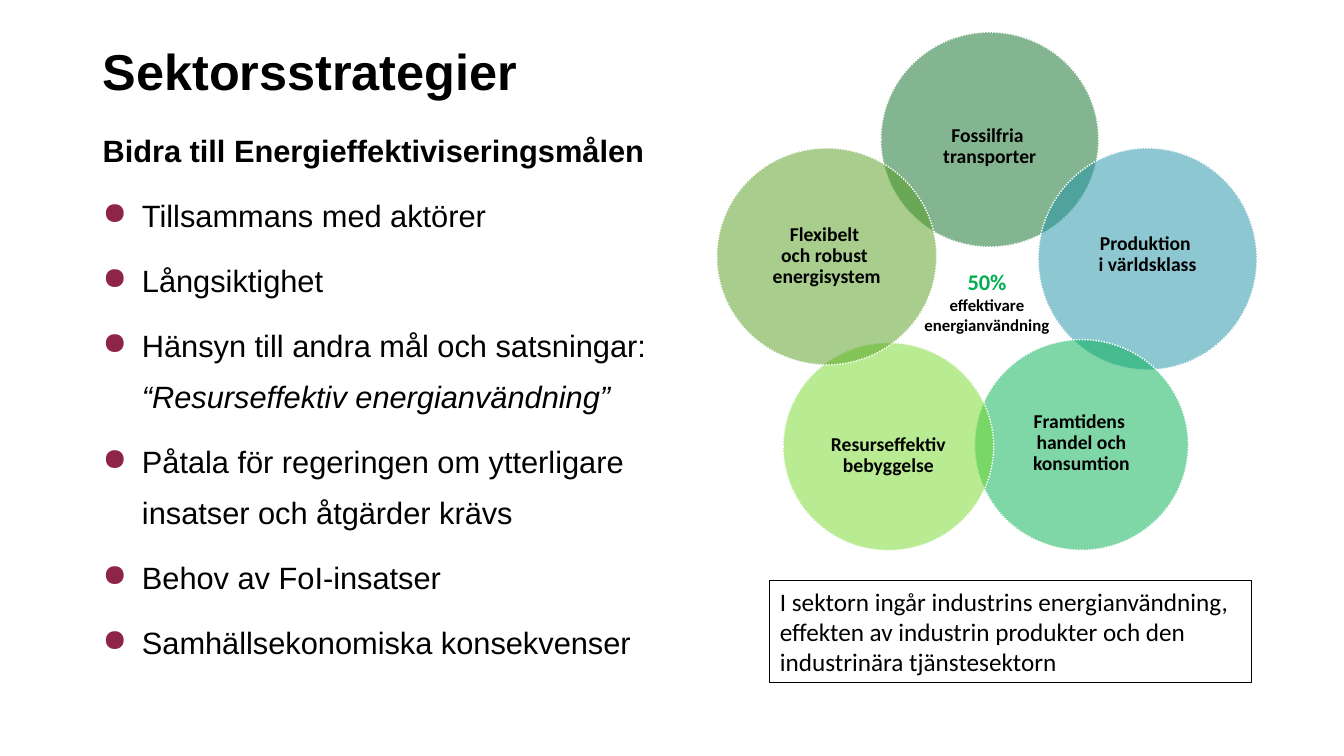
from lxml.etree import SubElement
from pptx import Presentation
from pptx.dml.color import RGBColor
from pptx.enum.dml import MSO_LINE
from pptx.enum.shapes import MSO_SHAPE
from pptx.enum.text import MSO_ANCHOR, PP_ALIGN
from pptx.oxml.ns import qn
from pptx.util import Inches, Pt

BLACK = RGBColor(0, 0, 0)
WHITE = RGBColor(0xFF, 0xFF, 0xFF)
WINE = RGBColor(0x8E, 0x25, 0x49)
FOREST = RGBColor(0x0A, 0x6C, 0x24)
TEAL = RGBColor(0x1D, 0x91, 0xA7)
GREEN = RGBColor(0x00, 0xB0, 0x50)
LIME = RGBColor(0x72, 0xD8, 0x26)
MOSS = RGBColor(0x52, 0x9D, 0x1C)

COLS, ROWS = 48, 27


class Deck:
    """Style and current slide; places are columns and rows of the grid."""
    head, body = "Arial", "Calibri"

    def __init__(self):
        self.show = Presentation()
        self.show.slide_width = Inches(13.33)
        self.show.slide_height = Inches(7.5)
        self.slide = self.show.slides.add_slide(self.show.slide_layouts[6])

    def place(self, col, row, wide, high):
        unit_x = self.show.slide_width / COLS
        unit_y = self.show.slide_height / ROWS
        return (round(col * unit_x), round(row * unit_y),
                round(wide * unit_x), round(high * unit_y))

    def style(self, para, face, size, bold=False, color=BLACK, align=PP_ALIGN.LEFT):
        para.alignment = align
        for run in para.runs:
            font = run.font
            font.name, font.size, font.bold = face, Pt(size), bold
            font.color.rgb = color

    def text(self, spot, words, anchor=MSO_ANCHOR.TOP):
        frame = self.slide.shapes.add_textbox(*self.place(*spot)).text_frame
        frame.word_wrap = True
        frame.vertical_anchor = anchor
        frame.text = words
        return frame

    def shape(self, kind, spot, words):
        shape = self.slide.shapes.add_shape(kind, *self.place(*spot))
        shape.shadow.inherit = False
        frame = shape.text_frame
        frame.word_wrap = True
        frame.vertical_anchor = MSO_ANCHOR.MIDDLE
        frame.paragraphs[0].text = words
        return shape

    def title(self, spot, words):
        para = self.text(spot, words, MSO_ANCHOR.BOTTOM).paragraphs[0]
        para.line_spacing = 0.9
        self.style(para, self.head, 36, True)

    def bullet(self, para):
        props = para._p.get_or_add_pPr()
        props.set("marL", str(Inches(0.39)))
        props.set("indent", str(-Inches(0.39)))
        tint = SubElement(props, qn("a:buClr"))
        SubElement(tint, qn("a:srgbClr")).set("val", str(WINE))
        SubElement(props, qn("a:buChar")).set("char", "●")

    def list(self, spot, lead, items):
        frame = self.text(spot, lead)
        for item in items:
            para = frame.add_paragraph()
            para.text = item
            self.bullet(para)
            para.space_before = Pt(10)
        for para in frame.paragraphs:
            para.line_spacing = 1.38
            self.style(para, self.head, 22, para is None)
            for run in para.runs:
                run.font.bold = run.text == lead
                run.font.italic = run.text.startswith("“")

    def disc(self, spot, color, words, shift):
        """Sheer circle; shift moves its label down, in inches."""
        disc = self.shape(MSO_SHAPE.OVAL, spot, words)
        disc.fill.solid()
        disc.fill.fore_color.rgb = color
        tint = disc._element.spPr.find(qn("a:solidFill")).find(qn("a:srgbClr"))
        SubElement(tint, qn("a:alpha")).set("val", "50000")
        disc.line.color.rgb = WHITE
        disc.line.width = Pt(1)
        disc.line.dash_style = MSO_LINE.ROUND_DOT
        frame = disc.text_frame
        frame.margin_left = frame.margin_right = 0
        frame.margin_top = Inches(max(0, 2 * shift))
        frame.margin_bottom = Inches(max(0, -2 * shift))
        para = frame.paragraphs[0]
        para.line_spacing = 0.9
        self.style(para, self.body, 14, True, align=PP_ALIGN.CENTER)

    def goal(self, spot, share, words):
        frame = self.text(spot, share)
        self.style(frame.paragraphs[0], self.body, 16, True, GREEN, PP_ALIGN.CENTER)
        para = frame.add_paragraph()
        para.text = words
        self.style(para, self.body, 12, True, align=PP_ALIGN.CENTER)

    def note(self, spot, words):
        box = self.shape(MSO_SHAPE.RECTANGLE, spot, words)
        box.fill.background()
        box.line.color.rgb = BLACK
        box.line.width = Pt(0.75)
        self.style(box.text_frame.paragraphs[0], self.body, 18)


def main():
    deck = Deck()

    # Title and list
    deck.title((3.31, 1.22, 41.4, 2.59), "Sektorsstrategier")
    deck.list((3.31, 4.03, 23.47, 18.94), "Bidra till Energieffektiviseringsmålen", [
        "Tillsammans med aktörer",
        "Långsiktighet",
        "Hänsyn till andra mål och satsningar:\v“Resurseffektiv energianvändning”",
        "Påtala för regeringen om ytterligare insatser och åtgärder krävs",
        "Behov av FoI-insatser",
        "Samhällsekonomiska konsekvenser",
    ])

    # Ring of sectors
    for spot, color, words, shift in [
        ((31.46, 1.15, 7.78, 7.67), FOREST, "Fossilfria \vtransporter", 0.07),
        ((37.08, 5.29, 7.81, 7.92), TEAL, "Produktion \vi världsklass", -0.04),
        ((34.81, 12.13, 7.63, 7.52), GREEN, "Framtidens \vhandel och konsumtion", -0.02),
        ((27.97, 12.24, 7.52, 7.42), LIME, "Resurseffektiv bebyggelse", 0.09),
        ((25.6, 5.29, 7.85, 7.74), MOSS, "Flexibelt \voch robust \venergisystem", 0),
    ]:
        deck.disc(spot, color, words, shift)
    deck.goal((32.44, 9.4, 5.62, 2.48), "50%", "effektivare energianvändning")

    # Note on the sector
    deck.note((27.5, 20.74, 17.21, 3.64),
              "I sektorn ingår industrins energianvändning, effekten av industrin "
              "produkter och den industrinära tjänstesektorn")

    deck.show.save("out.pptx")


if __name__ == "__main__":
    main()
